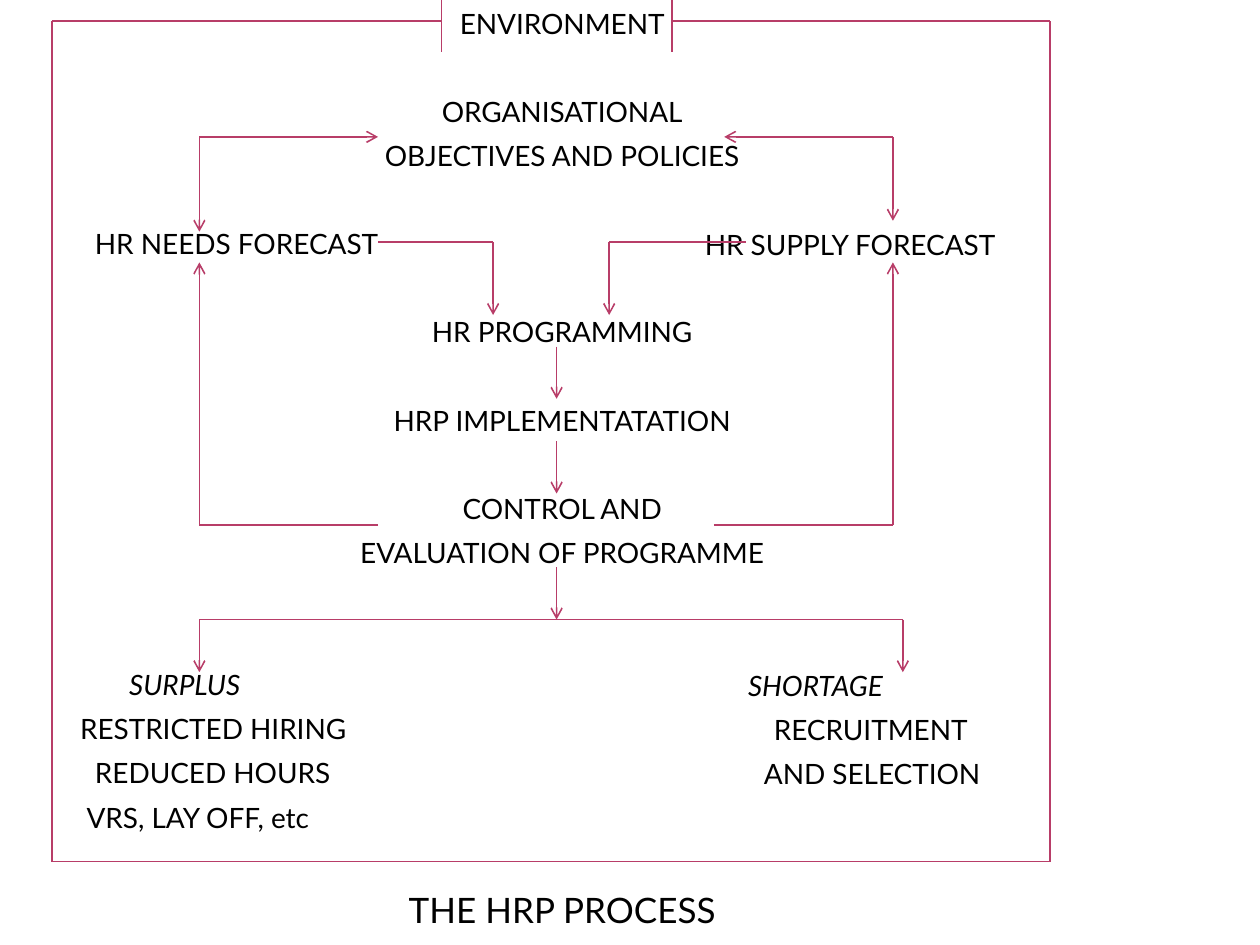
from itertools import pairwise

from lxml.etree import SubElement
from pptx import Presentation
from pptx.dml.color import RGBColor
from pptx.enum.shapes import MSO_CONNECTOR
from pptx.enum.text import MSO_ANCHOR, MSO_AUTO_SIZE, PP_ALIGN
from pptx.oxml.ns import qn
from pptx.util import Cm, Pt

BLACK = RGBColor(0x00, 0x00, 0x00)
WHITE = RGBColor(0xFF, 0xFF, 0xFF)
ROSE = RGBColor(0xB8, 0x3D, 0x68)
FONT = "Lato"
ROW_GAP = 6
ROW_PITCH = 25.2

LEFT, RIGHT, TOP, BOTTOM = 1.05, 21.17, 0.42, 17.37
LABEL_LEFT, LABEL_RIGHT, LABEL_BOTTOM = 8.9, 13.55, 1.05
NEEDS, SUPPLY, MIDDLE, SHORTAGE = 4.02, 18.0, 11.22, 18.2
OBJECTIVES, FORECAST, CONTROL, OUTCOME = 2.76, 4.88, 10.58, 12.49

OBJECTIVE_STEPS = [
    ("ENVIRONMENT", 0),
    ("ORGANISATIONAL", 1),
    ("OBJECTIVES AND POLICIES", 0),
]
PROGRAMME_STEPS = [
    ("HR PROGRAMMING", 1),
    ("HRP IMPLEMENTATATION", 1),
    ("CONTROL AND", 1),
    ("EVALUATION OF PROGRAMME", 0),
]
SURPLUS_MEASURES = [
    ("RESTRICTED HIRING", 0.72),
    ("REDUCED HOURS", 1.02),
    ("VRS, LAY OFF, etc", 0.85),
]
SHORTAGE_MEASURES = [
    ("RECRUITMENT", 0.52),
    ("AND SELECTION", 0.32),
]

PLAIN_ROUTES = [
    [(LABEL_LEFT, TOP), (LEFT, TOP), (LEFT, BOTTOM), (RIGHT, BOTTOM),
     (RIGHT, TOP), (LABEL_RIGHT, TOP)],
    [(LABEL_LEFT, 0), (LABEL_LEFT, LABEL_BOTTOM)],
    [(LABEL_RIGHT, 0), (LABEL_RIGHT, LABEL_BOTTOM)],
]
ARROW_ROUTES = [
    [(NEEDS, OBJECTIVES), (7.62, OBJECTIVES)],
    [(NEEDS, OBJECTIVES), (NEEDS, 4.67)],
    [(SUPPLY, OBJECTIVES), (14.6, OBJECTIVES)],
    [(SUPPLY, OBJECTIVES), (SUPPLY, 4.45)],
    [(7.62, FORECAST), (9.94, FORECAST), (9.94, 6.35)],
    [(15.03, FORECAST), (12.28, FORECAST), (12.28, 6.35)],
    [(7.62, CONTROL), (NEEDS, CONTROL), (NEEDS, 5.29)],
    [(14.39, CONTROL), (SUPPLY, CONTROL), (SUPPLY, 5.29)],
    [(MIDDLE, 6.99), (MIDDLE, 8.04)],
    [(MIDDLE, 8.89), (MIDDLE, 9.95)],
    [(MIDDLE, 11.43), (MIDDLE, OUTCOME)],
    [(SHORTAGE, OUTCOME), (NEEDS, OUTCOME), (NEEDS, 13.55)],
    [(SHORTAGE, OUTCOME), (SHORTAGE, 13.55)],
]


def place(box, left, top, width, height, anchor=MSO_ANCHOR.TOP):
    box.left, box.top, box.width, box.height = map(Cm, (left, top, width, height))
    frame = box.text_frame
    frame.word_wrap = True
    frame.auto_size = MSO_AUTO_SIZE.NONE
    frame.vertical_anchor = anchor
    return frame


def style_font(paragraph, size, italic=False):
    font = paragraph.font
    font.name, font.size, font.italic = FONT, Pt(size), italic
    font.color.rgb = BLACK


def add_row(frame, text, blank_rows=0, indent=0, italic=False, centred=False):
    first = not frame.text
    paragraph = frame.paragraphs[0] if first else frame.add_paragraph()
    paragraph.text = text
    paragraph.alignment = PP_ALIGN.CENTER if centred else PP_ALIGN.LEFT
    paragraph.space_before = Pt(0 if first else ROW_GAP + blank_rows * ROW_PITCH)
    properties = paragraph._p.get_or_add_pPr()
    properties.set("marL", str(Cm(indent)))
    properties.set("indent", "0")
    SubElement(properties, qn("a:buNone"))
    style_font(paragraph, 16, italic)


def add_steps(frame, steps):
    for text, blank_rows in steps:
        add_row(frame, text, blank_rows, centred=True)


def add_outcome(frame, heading, indent, measures, blank_rows=0):
    add_row(frame, heading, blank_rows, indent, italic=True)
    for text, measure_indent in measures:
        add_row(frame, text, indent=measure_indent)


def add_label_box(page, left, top, width, height):
    box = page.shapes.add_textbox(0, 0, 0, 0)
    frame = place(box, left, top, width, height)
    frame.margin_left = frame.margin_right = 0
    frame.margin_top = frame.margin_bottom = 0
    return frame


def add_line(page, start, end, arrow):
    line = page.shapes.add_connector(
        MSO_CONNECTOR.STRAIGHT, *map(Cm, (*start, *end)))
    line.line.color.rgb = ROSE
    line.line.width = Pt(0.9)
    if arrow:
        SubElement(line.line._get_or_add_ln(), qn("a:tailEnd"), type="arrow")
    SubElement(line._element.spPr, qn("a:effectLst"))


def add_route(page, points, arrow=False):
    for start, end in pairwise(points):
        add_line(page, start, end, arrow and end == points[-1])


def fill_body(box):
    frame = place(box, 0.64, 0, 21.39, 17.5)
    add_steps(frame, OBJECTIVE_STEPS)
    add_row(frame, "HR NEEDS FORECAST", 1, 1.02)
    add_steps(frame, PROGRAMME_STEPS)
    add_outcome(frame, "SURPLUS", 1.71, SURPLUS_MEASURES, 2)


def add_supply_side(page):
    add_row(add_label_box(page, 14.21, 4.58, 6.6, 0.7), "HR SUPPLY FORECAST")
    frame = add_label_box(page, 15.08, 13.47, 5.8, 2.5)
    add_outcome(frame, "SHORTAGE", 0, SHORTAGE_MEASURES)


def fill_title(box):
    frame = place(box, 0.64, 17.7, 21.39, 1.27, MSO_ANCHOR.MIDDLE)
    frame.text = "THE HRP PROCESS"
    paragraph = frame.paragraphs[0]
    paragraph.alignment = PP_ALIGN.CENTER
    style_font(paragraph, 20)


def main():
    deck = Presentation()
    deck.slide_width, deck.slide_height = Cm(25.4), Cm(19.05)
    page = deck.slides.add_slide(deck.slide_layouts[1])
    page.background.fill.solid()
    page.background.fill.fore_color.rgb = WHITE
    fill_title(page.shapes.title)
    fill_body(page.placeholders[1])
    add_supply_side(page)
    for points in PLAIN_ROUTES:
        add_route(page, points)
    for points in ARROW_ROUTES:
        add_route(page, points, arrow=True)
    deck.save("out.pptx")


if __name__ == "__main__":
    main()
